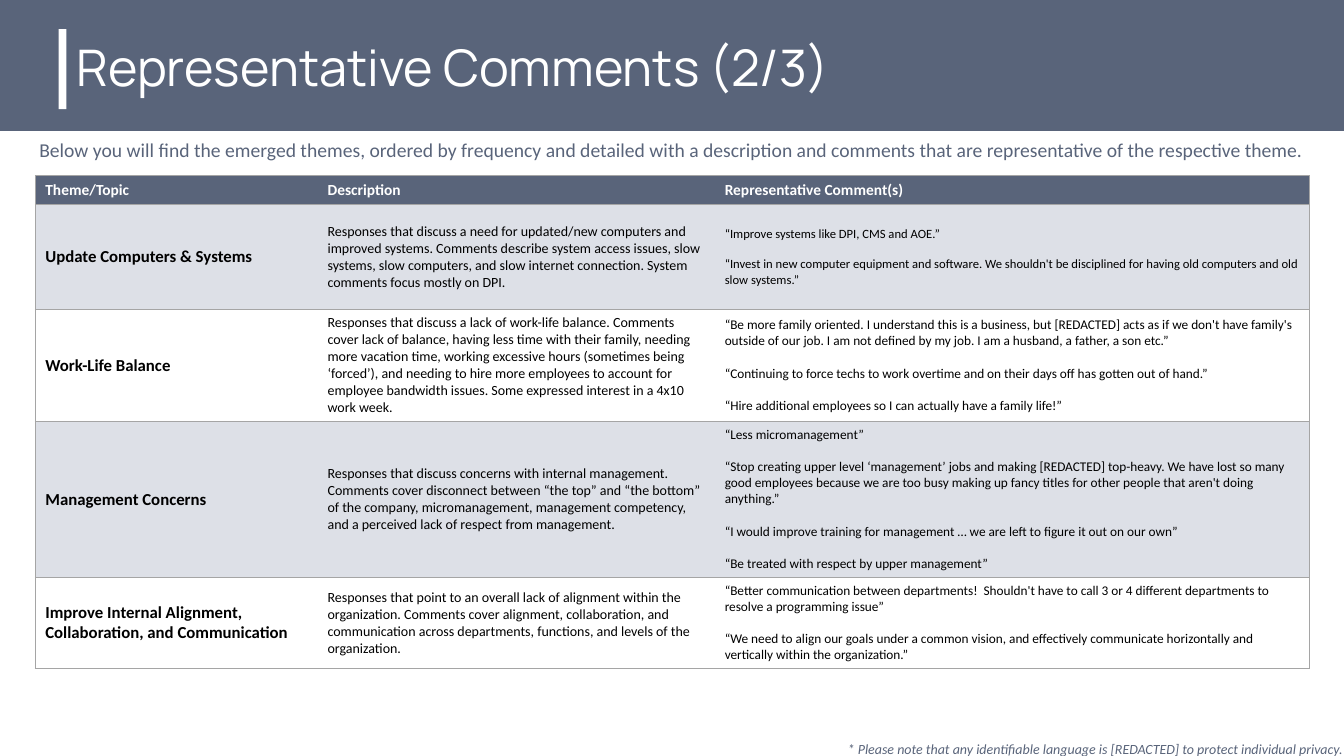
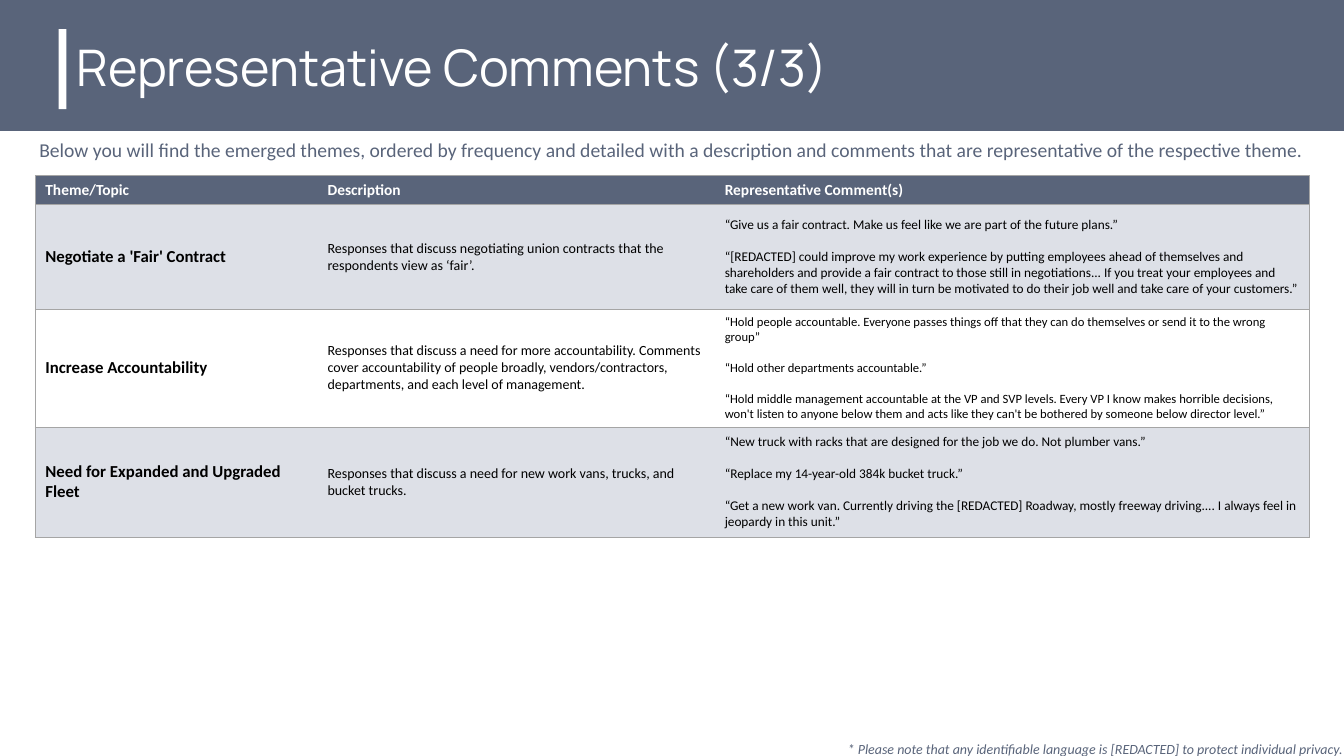
from lxml import etree
from pptx import Presentation
from pptx.dml.color import RGBColor
from pptx.enum import shapes, text
from pptx.oxml import ns
from pptx.util import Pt

HUES = {"slate": "59647A", "pale": "DDE0E7", "rule": "A5A5A5",
        "white": "FFFFFF", "black": "000000"}
BODY, HEAD = "Calibri", "Manrope"
WIDE, HIGH = 960, 540
COLS = (201.6, 283.7, 424.8)
TOP_ROW = 20.8
LABELS = ("Theme/Topic", "Description", "Representative Comment(s)")
INTRO = ("Below you will find the emerged themes, ordered by frequency and detailed with "
         "a description and comments that are representative of the respective theme.")
NOTE = ("* Please note that any identifiable language is [REDACTED] "
        "to protect individual privacy.")

# Each theme: row height, name, description, comment size, comments
PAGES = [
    ("Representative Comments (2/3)", [
        (74.9, "Update Computers & Systems",
         "Responses that discuss a need for updated/new computers and improved systems. "
         "Comments describe system access issues, slow systems, slow computers, and slow "
         "internet connection. System comments focus mostly on DPI.",
         9, ["“Improve systems like DPI, CMS and AOE.”",
             "“Invest in new computer equipment and software. We shouldn't be disciplined "
             "for having old computers and old slow systems.”"]),
        (80, "Work-Life Balance",
         "Responses that discuss a lack of work-life balance. Comments cover lack of balance, "
         "having less time with their family, needing more vacation time, working excessive "
         "hours (sometimes being ‘forced’), and needing to hire more employees to account for "
         "employee bandwidth issues. Some expressed interest in a 4x10 work week.",
         9.5, ["“Be more family oriented. I understand this is a business, but [REDACTED] acts "
               "as if we don't have family's outside of our job. I am not defined by my job. "
               "I am a husband, a father, a son etc.”",
               "“Continuing to force techs to work overtime and on their days off has gotten "
               "out of hand.”",
               "“Hire additional employees so I can actually have a family life!”"]),
        (111.5, "Management Concerns",
         "Responses that discuss concerns with internal management. Comments cover disconnect "
         "between “the top” and “the bottom” of the company, micromanagement, management "
         "competency, and a perceived lack of respect from management.",
         9.5, ["“Less micromanagement”",
               "“Stop creating upper level ‘management’ jobs and making [REDACTED] top-heavy. "
               "We have lost so many good employees because we are too busy making up fancy "
               "titles for other people that aren't doing anything.”",
               "“I would improve training for management … we are left to figure it out on "
               "our own”",
               "“Be treated with respect by upper management”"]),
        (65, "Improve Internal Alignment, Collaboration, and Communication",
         "Responses that point to an overall lack of alignment within the organization. "
         "Comments cover alignment, collaboration, and communication across departments, "
         "functions, and levels of the organization.",
         9.5, ["“Better communication between departments!  Shouldn't have to call 3 or 4 "
               "different departments to resolve a programming issue”",
               "“We need to align our goals under a common vision, and effectively communicate "
               "horizontally and vertically within the organization.”"]),
    ]),
    ("Representative Comments (3/3)", [
        (74.9, "Negotiate a 'Fair' Contract",
         "Responses that discuss negotiating union contracts that the respondents view as "
         "‘fair’.",
         9.5, ["“Give us a fair contract. Make us feel like we are part of the future plans.”",
               "“[REDACTED] could improve my work experience by putting employees ahead of "
               "themselves and shareholders and provide a fair contract to those still in "
               "negotiations... If you treat your employees and take care of them well, they "
               "will in turn be motivated to do their job well and take care of your "
               "customers.”"]),
        (84, "Increase Accountability",
         "Responses that discuss a need for more accountability. Comments cover accountability "
         "of people broadly, vendors/contractors, departments, and each level of management.",
         9, ["“Hold people accountable. Everyone passes things off that they can do themselves "
             "or send it to the wrong group”",
             "“Hold other departments accountable.”",
             "“Hold middle management accountable at the VP and SVP levels. Every VP I know "
             "makes horrible decisions, won't listen to anyone below them and acts like they "
             "can't be bothered by someone below director level.”"]),
        (78.5, "Need for Expanded and Upgraded Fleet",
         "Responses that discuss a need for new work vans, trucks, and bucket trucks.",
         9.5, ["“New truck with racks that are designed for the job we do. Not plumber vans.”",
               "“Replace my 14-year-old 384k bucket truck.”",
               "“Get a new work van. Currently driving the [REDACTED] Roadway, mostly freeway "
               "driving.... I always feel in jeopardy in this unit.”"]),
    ]),
]


def rgb(hue):
    return RGBColor.from_string(HUES[hue])


def style(para, size, hue, face=BODY, bold=False, ital=False):
    for run in para.runs:
        font = run.font
        font.name, font.size, font.bold, font.italic = face, Pt(size), bold, ital
        font.color.rgb = rgb(hue)


def place(shape, left, top, width, height):
    shape.left, shape.top = Pt(left), Pt(top)
    shape.width, shape.height = Pt(width), Pt(height)


def band(slide, layout, spot, hue, *box):
    """Draw a plain bar and keep it on the layout, behind the text."""
    bar = slide.shapes.add_shape(shapes.MSO_SHAPE.RECTANGLE, *map(Pt, box))
    bar.shadow.inherit = False
    bar.fill.solid()
    bar.fill.fore_color.rgb = rgb(hue)
    bar.line.fill.background()
    layout.shapes.element.insert(spot, bar._element)


def frame(shape, words, align):
    """Fill a one-line text shape and return its paragraph."""
    tf = shape.text_frame
    tf.text = words
    tf.word_wrap = True
    tf.auto_size = text.MSO_AUTO_SIZE.NONE
    para = tf.paragraphs[0]
    para.alignment = align
    para.line_spacing = 0.9
    para.space_before = Pt(0)
    return para


def title(slide, words):
    shape = slide.shapes.title
    para = frame(shape, words, text.PP_ALIGN.LEFT)
    tf = shape.text_frame
    tf.vertical_anchor = text.MSO_ANCHOR.MIDDLE
    tf.margin_left = tf.margin_right = tf.margin_top = tf.margin_bottom = Pt(7.2)
    style(para, 36, "white", HEAD)


def intro(slide):
    para = frame(slide.placeholders[1], INTRO, text.PP_ALIGN.CENTER)
    props = para._p.get_or_add_pPr()
    props.set("marL", "0")
    props.set("indent", "0")
    etree.SubElement(props, ns.qn("a:buNone"))
    style(para, 14, "slate")


def note(slide):
    box = slide.shapes.add_textbox(Pt(595.4), Pt(527), Pt(373.7), Pt(26))
    style(frame(box, NOTE, text.PP_ALIGN.CENTER), 10, "slate", ital=True)


def edges(cell, sides):
    """Rule the named sides of a cell and clear the others."""
    props = cell._tc.get_or_add_tcPr()
    for side in "LRTB":
        line = etree.SubElement(props, ns.qn("a:ln" + side), w=str(Pt(0.5)))
        if side in sides:
            fill = etree.SubElement(line, ns.qn("a:solidFill"))
            etree.SubElement(fill, ns.qn("a:srgbClr"), val=HUES["rule"])
        else:
            etree.SubElement(line, ns.qn("a:noFill"))


def fill_cell(cell, lines, size, hue, back, bold, sides):
    edges(cell, sides)
    cell.fill.solid()
    cell.fill.fore_color.rgb = rgb(back)
    cell.vertical_anchor = text.MSO_ANCHOR.MIDDLE
    cell.text_frame.text = "\n".join(lines)
    for i, para in enumerate(cell.text_frame.paragraphs):
        if i:
            para.space_before = Pt(round(size * 1.22, 1))  # one line of gap
        style(para, size, hue, bold=bold)


def grid(slide, themes):
    highs = [TOP_ROW] + [theme[0] for theme in themes]
    table = slide.shapes.add_table(len(highs), len(COLS), Pt(25.2), Pt(125.3),
                                   Pt(sum(COLS)), Pt(sum(highs))).table
    table.horz_banding = False
    for col, width in zip(table.columns, COLS):
        col.width = Pt(width)
    for row, high in zip(table.rows, highs):
        row.height = Pt(high)
    sides = ("LTB", "TB", "RTB")
    for c, label in enumerate(LABELS):
        fill_cell(table.cell(0, c), [label], 11, "white", "slate", True, sides[c])
    for r, (_, name, about, size, quotes) in enumerate(themes, 1):
        back = "pale" if r % 2 else "white"
        parts = (([name], 12), ([about], 10), (quotes, size))
        for c, (lines, pts) in enumerate(parts):
            fill_cell(table.cell(r, c), lines, pts, "black", back, c == 0, sides[c])


def main():
    deck = Presentation()
    deck.slide_width, deck.slide_height = Pt(WIDE), Pt(HIGH)

    # Shared layout: text places and header bands
    layout = deck.slide_layouts[1]
    place(layout.placeholders[0], 47.5, 6.5, 741.6, 87)
    place(layout.placeholders[1], 12.2, 96.5, 935.3, 26)
    pages = [(deck.slides.add_slide(layout), *page) for page in PAGES]
    first = pages[0][0]
    band(first, layout, 2, "slate", 0, 0, WIDE, 93.6)
    band(first, layout, 3, "white", 41.8, 20.9, 5.7, 57)

    # Slides
    for slide, head, themes in pages:
        title(slide, head)
        intro(slide)
        grid(slide, themes)
        note(slide)
    deck.save("out.pptx")


if __name__ == "__main__":
    main()
